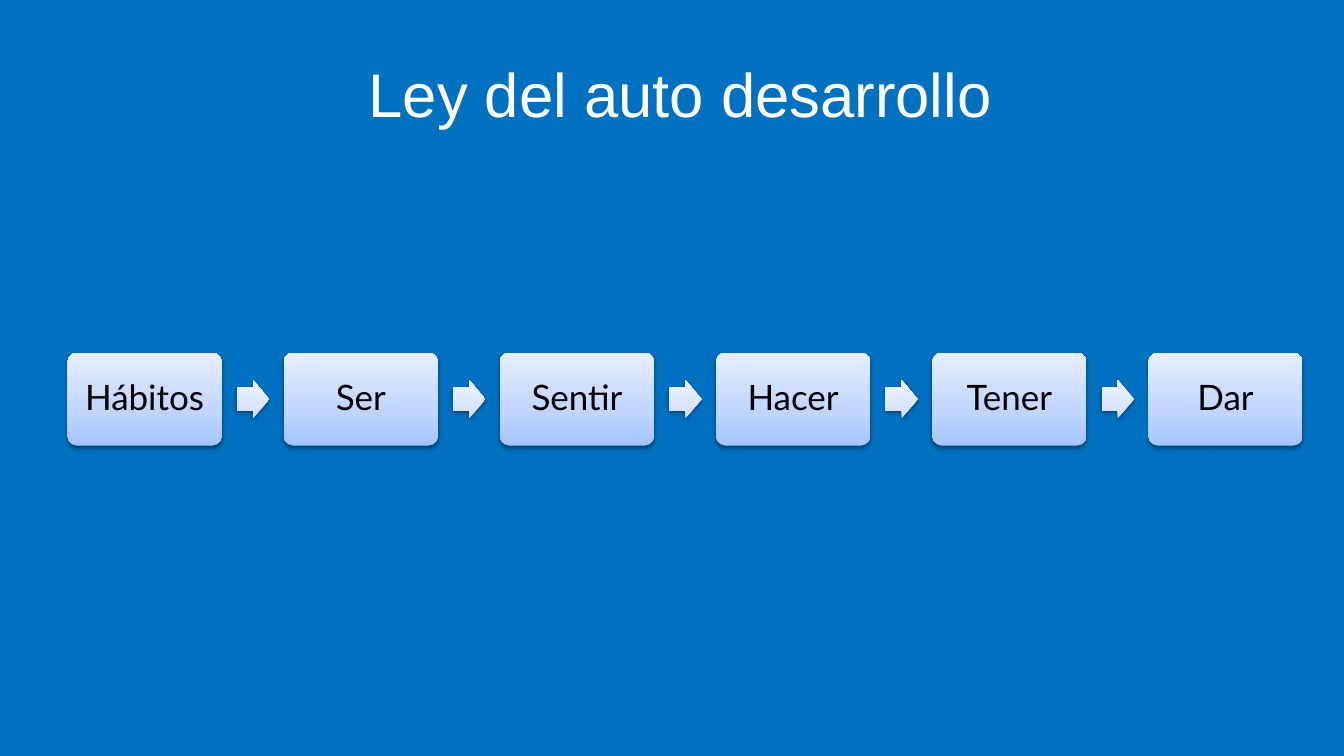
from lxml import etree
from pptx import Presentation
from pptx.dml.color import RGBColor
from pptx.enum.shapes import MSO_SHAPE
from pptx.enum.text import MSO_ANCHOR, PP_ALIGN
from pptx.oxml.ns import qn
from pptx.util import Inches, Pt

# Content
TITLE = "Ley del auto desarrollo"
STEPS = ["Hábitos", "Ser", "Sentir", "Hacer", "Tener", "Dar"]
BACKGROUND = "0070C0"
STEP_STOPS = [(0, "A4C4FF"), (35, "BFD4FF"), (100, "E6EEFF")]
ARROW_STOPS = [(0, "CDDDFE"), (35, "DBE6FE"), (100, "F0F5FF")]

# Layout in inches
STEP_LEFT, STEP_TOP, STEP_W, STEP_H = 0.67, 3.5, 1.53, 0.92
PITCH = 2.144
ARROW_OFFSET, ARROW_W, ARROW_H = 1.68, 0.32, 0.38
ARROW_TOP = STEP_TOP + (STEP_H - ARROW_H) / 2


def rgb(value):
    return RGBColor.from_string(value)


def write(shape, text, *, size, font, color, margin=0.1, spacing=1.0):
    tf = shape.text_frame
    tf.word_wrap = True
    tf.vertical_anchor = MSO_ANCHOR.MIDDLE
    tf.margin_left = tf.margin_right = Inches(margin)
    tf.margin_top = tf.margin_bottom = Inches(margin)
    p = tf.paragraphs[0]
    p.alignment = PP_ALIGN.CENTER
    p.line_spacing = spacing
    r = p.add_run()
    r.text = text
    r.font.size = Pt(size)
    r.font.name = font
    r.font.color.rgb = rgb(color)


def add_node(parent, tag, **attributes):
    node = etree.SubElement(parent, qn(tag))
    for name, value in attributes.items():
        node.set(name, str(value))
    return node


def add_raised(slide, kind, box, adjustments, stops):
    """Add a preset shape with a vertical gradient and a soft shadow."""
    sp = slide.shapes.add_shape(kind, *map(Inches, box))
    for i, value in enumerate(adjustments):
        sp.adjustments[i] = value
    sp.line.fill.background()

    # Gradient with three stops, lightest at the top
    sp.fill.gradient()
    sp.fill.gradient_angle = 90
    stop_list = sp._element.spPr.find(qn("a:gradFill")).find(qn("a:gsLst"))
    for old in list(stop_list):
        stop_list.remove(old)
    for position, color in stops:
        stop = add_node(stop_list, "a:gs", pos=position * 1000)
        add_node(stop, "a:srgbClr", val=color)

    # Shadow straight below
    sp.shadow.inherit = False
    effects = sp._element.spPr.find(qn("a:effectLst"))
    shadow = add_node(effects, "a:outerShdw", blurRad=Pt(3.1), dist=Pt(1.6),
                      dir=90 * 60000, rotWithShape=0)
    black = add_node(shadow, "a:srgbClr", val="000000")
    add_node(black, "a:alpha", val=38000)
    return sp


def main():
    prs = Presentation()
    prs.slide_width, prs.slide_height = Inches(13.33), Inches(7.5)
    s = prs.slides.add_slide(prs.slide_layouts[6])
    s.background.fill.solid()
    s.background.fill.fore_color.rgb = rgb(BACKGROUND)

    # Title
    title = s.shapes.add_textbox(*map(Inches, (0.75, 0.3, 12, 1.25)))
    write(title, TITLE, size=44, font="Arial", color="FFFFFF")

    # Chain of steps, with an arrow after each but the last
    for i, step in enumerate(STEPS):
        left = STEP_LEFT + i * PITCH
        sp = add_raised(s, MSO_SHAPE.ROUNDED_RECTANGLE,
                        (left, STEP_TOP, STEP_W, STEP_H), [0.1], STEP_STOPS)
        write(sp, step, size=25, font="Lato", color="000000", spacing=0.9)
        if i < len(STEPS) - 1:
            add_raised(s, MSO_SHAPE.RIGHT_ARROW,
                       (left + ARROW_OFFSET, ARROW_TOP, ARROW_W, ARROW_H),
                       [0.6, 0.5], ARROW_STOPS)

    prs.save("out.pptx")


if __name__ == "__main__":
    main()
